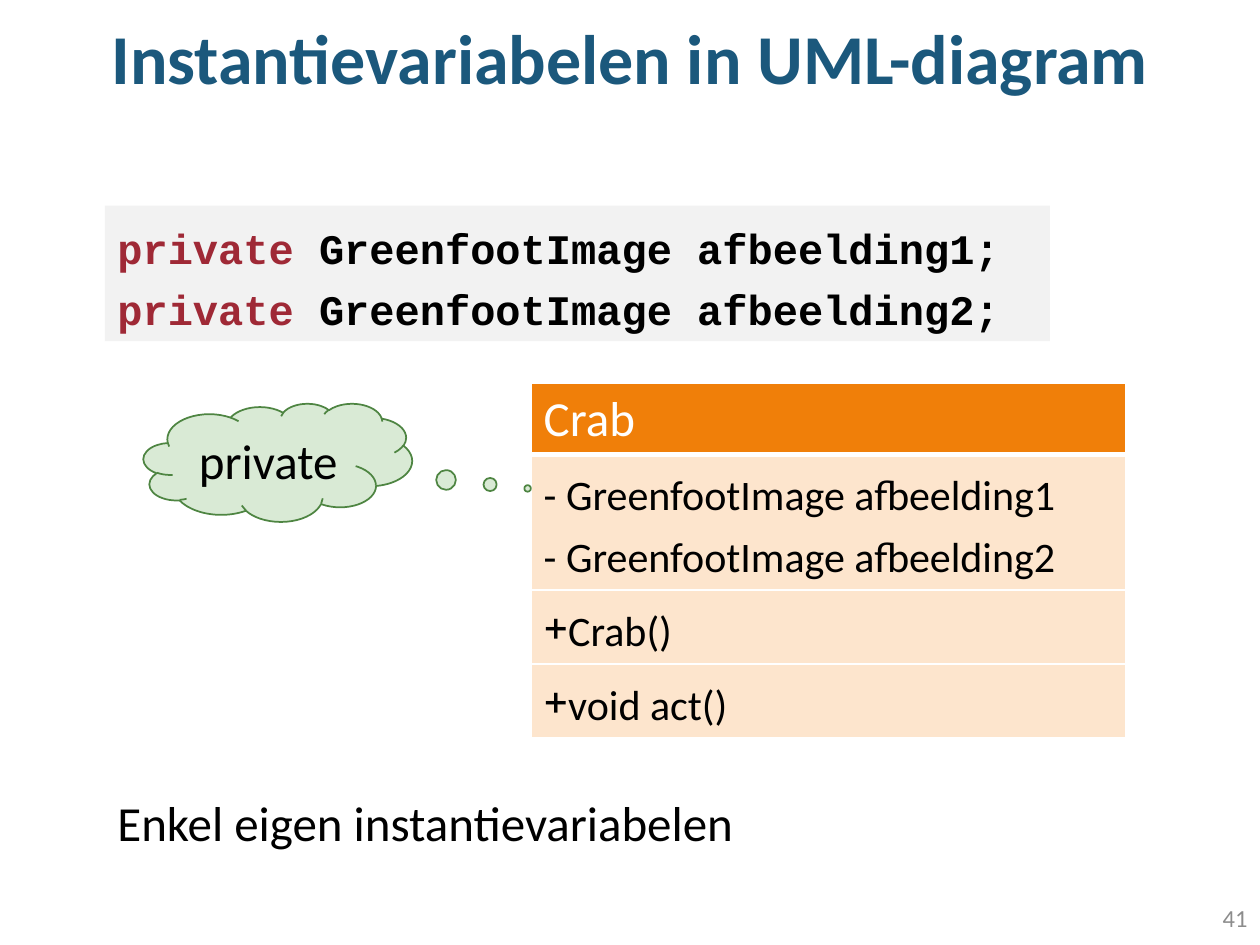
from lxml import etree
from pptx import Presentation, util as u
from pptx.dml.color import RGBColor
from pptx.enum import shapes, text
from pptx.oxml import ns

BLACK, WHITE, RED = "000000", "FFFFFF", "9F2936"
CODE_SPACING = u.Pt(35)


def color(value):
    return RGBColor.from_string(value)


def set_all(target, values):
    for name, value in values.items():
        setattr(target, name, value)


class SlideBuilder:
    font = "Calibri"

    def __init__(self, slide):
        self.slide = slide

    def add_lines(self, frame, lines, size, frame_format=None, line_format=None, **font_format):
        """Each line is a list of (text, colour) runs."""
        set_all(frame, {"word_wrap": True, **(frame_format or {})})
        for index, runs in enumerate(lines):
            paragraph = frame.paragraphs[0] if index == 0 else frame.add_paragraph()
            set_all(paragraph, line_format or {})
            for content, run_color in runs:
                run = paragraph.add_run()
                run.text = content
                set_all(run.font, {"name": self.font, "size": u.Pt(size),
                                   "bold": False, **font_format})
                run.font.color.rgb = color(run_color)

    def text_box(self, box, *args, **formats):
        shape = self.slide.shapes.add_textbox(*map(u.Pt, box))
        self.add_lines(shape.text_frame, *args, **formats)

    def shape(self, kind, box, fill, *args, line=None, adjust=(), **formats):
        shape = self.slide.shapes.add_shape(kind, *map(u.Pt, box))
        shape.shadow.inherit = False
        shape.fill.solid()
        shape.fill.fore_color.rgb = color(fill)
        if line:
            shape.line.color.rgb = color(line)
            shape.line.width = u.Pt(1)
        else:
            shape.line.fill.background()
        for index, value in enumerate(adjust):
            shape.adjustments[index] = value
        self.add_lines(shape.text_frame, *args, **formats)

    def borders(self, cell, line_color, widths):
        properties = cell._tc.get_or_add_tcPr()
        for index, (side, width) in enumerate(zip("LRTB", widths)):
            line = etree.Element(ns.qn(f"a:ln{side}"), w=str(u.Pt(width)))
            fill = etree.SubElement(line, ns.qn("a:solidFill"))
            etree.SubElement(fill, ns.qn("a:srgbClr"), val=line_color)
            properties.insert(index, line)

    def class_table(self, box, name, sections, heights):
        table = self.slide.shapes.add_table(len(heights), 1, *map(u.Pt, box)).table
        rows = [(None, [name])] + sections
        for index, (bullet, lines) in enumerate(rows):
            header = index == 0
            table.rows[index].height = u.Pt(heights[index])
            cell = table.cell(index, 0)
            cell.fill.solid()
            cell.fill.fore_color.rgb = color("F07F09" if header else "FDE5CD")
            self.borders(cell, WHITE, (1, 1, 1, 3 if header else 1))
            self.add_lines(cell.text_frame,
                           [[(line, WHITE if header else BLACK)] for line in lines],
                           28 if header else 24,
                           line_format={} if header else {"line_spacing": CODE_SPACING})
            if bullet:
                for paragraph in cell.text_frame.paragraphs:
                    properties = paragraph._p.get_or_add_pPr()
                    etree.SubElement(properties, ns.qn("a:buChar"), char=bullet)


def main():
    presentation = Presentation()
    presentation.slide_width, presentation.slide_height = u.Pt(720), u.Pt(540)
    builder = SlideBuilder(presentation.slides.add_slide(presentation.slide_layouts[6]))
    middle = {"vertical_anchor": text.MSO_ANCHOR.MIDDLE}
    left = 60

    # Title and page number
    builder.text_box((0, 0, 720, 70.5), [[("Instantievariabelen in UML-diagram", "1B587C")]],
                     40, middle,
                     {"alignment": text.PP_ALIGN.CENTER, "line_spacing": 0.9}, bold=True)
    builder.text_box((558, 510, 162, 28.5), [[("41", "8C8C8C")]], 14, middle,
                     {"alignment": text.PP_ALIGN.RIGHT})

    # Code block
    code = [[("private", RED), (f" GreenfootImage afbeelding{number};", BLACK)]
            for number in (1, 2)]
    builder.shape(shapes.MSO_SHAPE.RECTANGLE, (left, 117.5, 540, 77.5), "F2F2F2", code, 24,
                  frame_format={"vertical_anchor": text.MSO_ANCHOR.TOP},
                  line_format={"alignment": text.PP_ALIGN.LEFT, "line_spacing": CODE_SPACING},
                  name="Courier New", bold=True)

    # Remark
    builder.text_box((left, 449.5, 567, 41), [[("Enkel eigen instantievariabelen", BLACK)]], 28)

    # UML class
    fields = [f"- GreenfootImage afbeelding{number}" for number in (1, 2)]
    builder.class_table((303.5, 219, 340, 202), "Crab",
                        [(None, fields), ("+", ["Crab()"]), ("+", ["void act()"])],
                        (40.5, 77.2, 42.2, 42.2))

    # Callout on visibility
    builder.shape(shapes.MSO_SHAPE.CLOUD_CALLOUT, (82, 230.5, 153.5, 67.5), "D9EAD5",
                  [[("private", BLACK)]], 28, line="4E8542", adjust=(0.93, 0.22),
                  frame_format=middle, line_format={"alignment": text.PP_ALIGN.CENTER})

    presentation.save("out.pptx")


if __name__ == "__main__":
    main()
